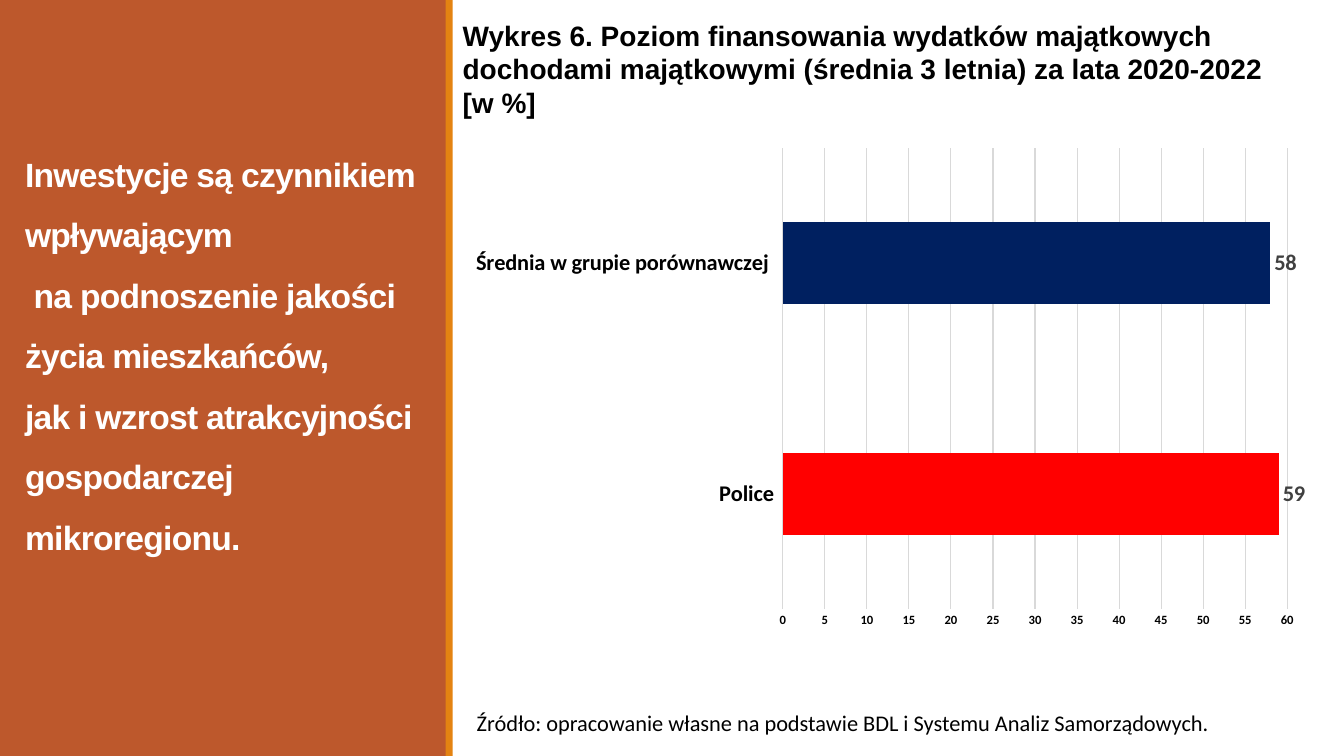
from lxml import etree
from pptx import Presentation
from pptx.chart.data import CategoryChartData
from pptx.dml.color import RGBColor
from pptx.enum.chart import XL_CHART_TYPE, XL_LABEL_POSITION, XL_TICK_MARK
from pptx.enum.shapes import MSO_SHAPE
from pptx.enum.text import MSO_ANCHOR
from pptx.oxml.ns import qn
from pptx.util import Inches, Pt

RECTANGLE = MSO_SHAPE.RECTANGLE
BAR_CLUSTERED = XL_CHART_TYPE.BAR_CLUSTERED
OUTSIDE_END = XL_LABEL_POSITION.OUTSIDE_END
NO_TICK = XL_TICK_MARK.NONE
TOP, MIDDLE = MSO_ANCHOR.TOP, MSO_ANCHOR.MIDDLE

COLORS = {
    "panel": "BD582C",
    "stripe": "E48312",
    "white": "FFFFFF",
    "black": "000000",
    "grid": "D9D9D9",
    "label": "404040",
    "group": "002060",
    "police": "FF0000",
}


def color(name):
    return RGBColor.from_string(COLORS[name])


def style(font, size, color_name, bold=False, name="Calibri"):
    font.name, font.size, font.bold = name, Pt(size), bold
    font.color.rgb = color(color_name)


deck = Presentation()
deck.slide_width, deck.slide_height = Inches(13.33), Inches(7.5)
page = deck.slides.add_slide(deck.slide_layouts[6])

# Left panel and its edge stripe
for left, width, fill in [(0, 4.43, "panel"), (4.42, 0.07, "stripe")]:
    band = page.shapes.add_shape(RECTANGLE, Inches(left), 0, Inches(width), Inches(7.5))
    band.shadow.inherit = False
    band.fill.solid()
    band.fill.fore_color.rgb = color(fill)
    band.line.fill.background()

# Texts: place, anchor, wrap, font, wording
message = (
    "Inwestycje są czynnikiem wpływającym\v na podnoszenie jakości życia mieszkańców,\v"
    "jak i wzrost atrakcyjności gospodarczej mikroregionu."
)
heading = (
    "Wykres 6. Poziom finansowania wydatków majątkowych dochodami majątkowymi "
    "(średnia 3 letnia) za lata 2020-2022 [w %]"
)
source = "Źródło: opracowanie własne na podstawie BDL i Systemu Analiz Samorządowych."
paragraphs = []
for place, anchor, wrap, font, wording in [
    ((0.15, 0.57, 4.13, 5.71), MIDDLE, True, (24, "white", True, "Arial"), message),
    ((4.49, 0.13, 8.47, 1.11), TOP, True, (20, "black", True, "Arial"), heading),
    ((4.63, 6.98, 7.56, 0.37), MIDDLE, False, (16, "black"), source),
]:
    box = page.shapes.add_textbox(*map(Inches, place))
    box.text_frame.word_wrap = wrap
    box.text_frame.vertical_anchor = anchor
    para = box.text_frame.paragraphs[0]
    para.text = wording
    style(para.font, *font)
    paragraphs.append(para)

paragraphs[0].line_spacing = 1.5
for span in paragraphs[0].runs:
    span._r.get_or_add_rPr().set("spc", "-50")

# Bar chart
data = CategoryChartData()
data.categories = ["Police ", "Średnia w grupie porównawczej  "]
data.add_series("Series 1", [59, 58])
chart = page.shapes.add_chart(
    BAR_CLUSTERED, Inches(4.58), Inches(1.37), Inches(8.61), Inches(4.97), data
).chart
chart.has_legend = False
chart.has_title = False
style(chart.font, 10, "black")

plot = chart.plots[0]
plot.gap_width = 182
plot.vary_by_categories = False
bars = plot.series[0]
bars.invert_if_negative = False
for fill in (bars.format.fill, bars.points[0].format.fill):
    fill.solid()
bars.format.fill.fore_color.rgb = color("group")
bars.points[0].format.fill.fore_color.rgb = color("police")

plot.has_data_labels = True
labels = plot.data_labels
labels.show_value = True
labels.position = OUTSIDE_END
style(labels.font, 16, "label", True)

categories, values = chart.category_axis, chart.value_axis
for axis, size in [(categories, 16), (values, 9)]:
    axis.major_tick_mark = axis.minor_tick_mark = NO_TICK
    style(axis.tick_labels.font, size, "black", True)
values.minimum_scale, values.maximum_scale, values.major_unit = 0, 63, 5
values.format.line.fill.background()
categories.has_major_gridlines = False
values.has_major_gridlines = True
for line in (categories.format.line, values.major_gridlines.format.line):
    line.color.rgb = color("grid")
    line.width = Pt(0.75)

# Plot area as fractions of the chart
area = chart._chartSpace.chart.plotArea
for old in area.findall(qn("c:layout")):
    area.remove(old)
layout = etree.Element(qn("c:layout"))
manual = etree.SubElement(layout, qn("c:manualLayout"))
for tag, value in [
    ("layoutTarget", "inner"), ("xMode", "edge"), ("yMode", "edge"),
    ("x", "0.37"), ("y", "0.02"), ("w", "0.61"), ("h", "0.92"),
]:
    etree.SubElement(manual, qn(f"c:{tag}")).set("val", value)
area.insert(0, layout)

deck.save("out.pptx")
